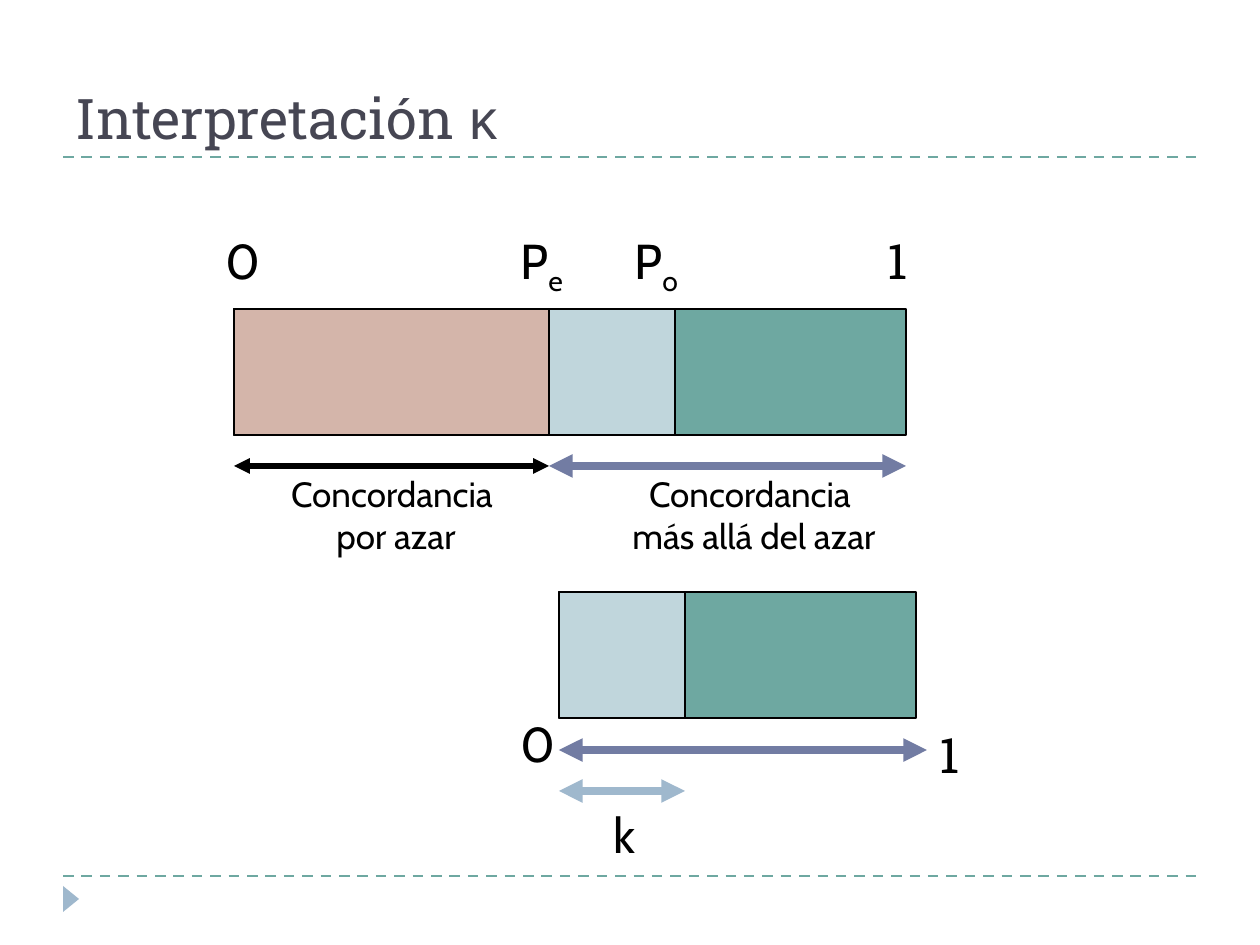
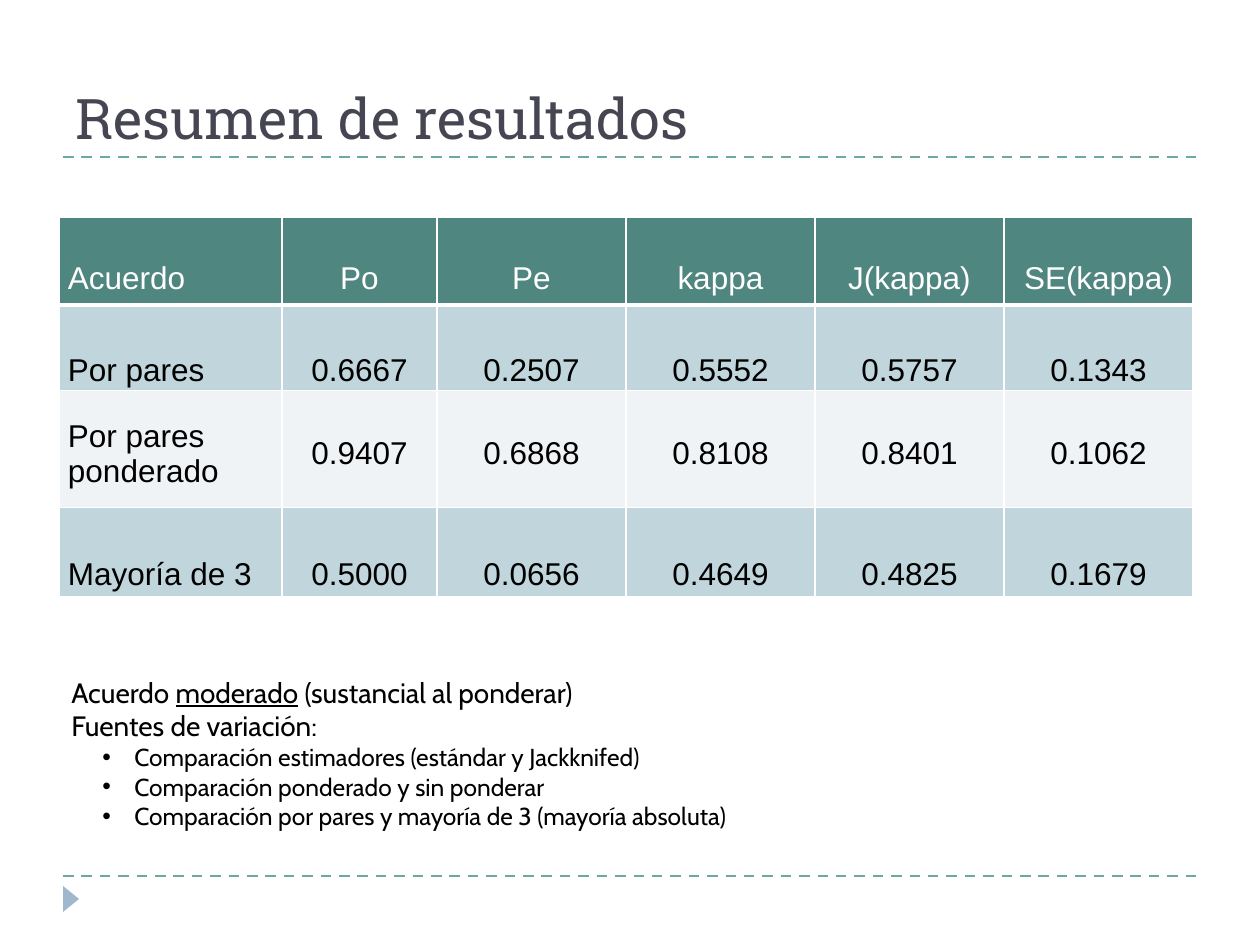
from dataclasses import dataclass

from lxml import etree
from pptx import Presentation
from pptx import util as u
from pptx.dml.color import RGBColor
from pptx.enum import dml, shapes, text
from pptx.oxml import ns


@dataclass(frozen=True)
class Theme:
    title: str = "464653"
    ink: str = "000000"
    white: str = "FFFFFF"
    teal: str = "6EA8A1"
    dark_teal: str = "508680"
    pale_blue: str = "C0D6DC"
    pale_grey: str = "F0F3F6"
    sky: str = "9FB8CD"
    violet: str = "727CA3"
    rose: str = "D4B5AA"
    slab: str = "Roboto Slab"
    sans: str = "Cabin"
    table_font: str = "Arial"
    title_size: int = 32
    axis_size: int = 28
    caption_size: int = 20
    table_size: int = 18
    note_size: int = 16
    bullet_size: int = 14


T = Theme()
SCALE = 914400 / 126
LEFT = text.PP_ALIGN.LEFT
CENTER = text.PP_ALIGN.CENTER


def px(n):
    return u.Emu(round(n * SCALE))


def rgb(color):
    return RGBColor.from_string(color)


def sub(parent, tag, **attrs):
    return etree.SubElement(parent, ns.qn(tag), attrs)


# Shared drawing helpers

def style(p, size, name=T.sans, color=T.ink, align=LEFT):
    p.alignment = align
    p.font.size = u.Pt(size)
    p.font.name = name
    p.font.color.rgb = rgb(color)


def text_box(s, box, wrap=True):
    tf = s.shapes.add_textbox(*map(px, box)).text_frame
    tf.word_wrap = wrap
    return tf


def add_run(p, words):
    r = p.add_run()
    r.text = words
    return r


def shape(s, kind, box, fill, outlined=False):
    sp = s.shapes.add_shape(kind, *map(px, box))
    sp.shadow.inherit = False
    sp.fill.solid()
    sp.fill.fore_color.rgb = rgb(fill)
    if outlined:
        sp.line.color.rgb = rgb(T.ink)
        sp.line.width = u.Pt(0.75)
    else:
        sp.line.fill.background()
    return sp


def h_line(s, x1, x2, y, color, width):
    c = s.shapes.add_connector(shapes.MSO_CONNECTOR.STRAIGHT,
                               px(x1), px(y), px(x2), px(y))
    c.line.color.rgb = rgb(color)
    c.line.width = u.Pt(width)
    sub(c._element.spPr, "a:effectLst")
    return c


def double_arrow(s, x1, x2, y, color, width=4.5):
    ln = h_line(s, x1, x2, y, color, width).line._get_or_add_ln()
    for end in ("a:headEnd", "a:tailEnd"):
        sub(ln, end, type="triangle")


# Frame: dashed rules, corner mark and title

def frame(prs, title, symbol=""):
    s = prs.slides.add_slide(prs.slide_layouts[6])
    for y in (876, 157):
        h_line(s, 63, 1197, y, T.teal, 1.5).line.dash_style = dml.MSO_LINE.DASH
    mark = shape(s, shapes.MSO_SHAPE.ISOSCELES_TRIANGLE, (58, 891, 26, 16), T.sky)
    mark.rotation = 90
    tf = text_box(s, (63, 21, 1134, 136))
    tf.vertical_anchor = text.MSO_ANCHOR.BOTTOM
    p = tf.paragraphs[0]
    style(p, T.title_size, T.slab, T.title)
    add_run(p, title)
    if symbol:
        add_run(p, symbol).font.name = T.table_font
    return s


# Agreement scale

def axis_label(s, x, y, words, subscript="", name=T.sans):
    tf = text_box(s, (x, y, 105 if subscript else 50, 72), wrap=bool(subscript))
    p = tf.paragraphs[0]
    style(p, T.axis_size, name)
    add_run(p, words)
    if subscript:
        add_run(p, subscript).font._element.set("baseline", "-25000")


def caption(s, box, lines):
    tf = text_box(s, box)
    for i, line in enumerate(lines):
        p = tf.paragraphs[0] if i == 0 else tf.add_paragraph()
        style(p, T.caption_size, align=CENTER)
        add_run(p, line)


def stacked_bar(s, x, y, segments):
    """Segments run from the widest to the narrowest, all starting at x."""
    for width, fill in segments:
        shape(s, shapes.MSO_SHAPE.RECTANGLE, (x, y, width, 126), fill, outlined=True)


def full_scale(s, x, y, chance, observed, total):
    stacked_bar(s, x, y, [(total, T.teal), (observed, T.pale_blue), (chance, T.rose)])
    label_y = y - 85
    axis_label(s, x - 21, label_y, "0")
    axis_label(s, x + chance - 41, label_y, "P", "e")
    axis_label(s, x + observed - 53, label_y, "P", "o")
    axis_label(s, x + total - 31, label_y, "1", name=T.slab)
    arrow_y = y + 157
    double_arrow(s, x, x + chance, arrow_y, T.ink, 3)
    double_arrow(s, x + chance, x + total, arrow_y, T.violet)
    caption(s, (x, arrow_y, 324, 97), ["Concordancia ", "por azar"])
    caption(s, (x + chance, arrow_y, 410, 97), ["Concordancia ", "más allá del azar"])


def kappa_scale(s, x, y, kappa, total):
    stacked_bar(s, x, y, [(total, T.teal), (kappa, T.pale_blue)])
    double_arrow(s, x, x + total + 11, y + 158, T.violet)
    double_arrow(s, x, x + kappa, y + 199, T.sky)
    axis_label(s, x - 51, y + 115, "0")
    axis_label(s, x + total + 11, y + 126, "1", name=T.slab)
    axis_label(s, x + 42, y + 206, "k")


def interpretation_slide(prs):
    s = frame(prs, "Interpretación ", "κ")
    chance, observed, total = 315, 441, 672
    full_scale(s, 234, 309, chance, observed, total)
    kappa_scale(s, 559, 592, observed - chance, total - chance)


# Results table

RESULTS = [
    ["Acuerdo", "Po", "Pe", "kappa", "J(kappa)", "SE(kappa)"],
    ["Por pares", "0.6667", "0.2507", "0.5552", "0.5757", "0.1343"],
    ["Por pares ponderado", "0.9407", "0.6868", "0.8108", "0.8401", "0.1062"],
    ["Mayoría de 3", "0.5000", "0.0656", "0.4649", "0.4825", "0.1679"],
]
COL_WIDTHS = [223, 155] + [189] * 4
ROW_HEIGHTS = [88, 83, 117, 89]
ROW_FILLS = [T.dark_teal, T.pale_blue, T.pale_grey, T.pale_blue]
ROW_SPACING = [2.0, 2.0, 1.0, 2.0]


def borders(cell, row):
    widths = {"L": 1, "R": 1, "T": 3 if row == 1 else 1, "B": 3 if row == 0 else 1}
    for side, width in widths.items():
        ln = sub(cell._tc.get_or_add_tcPr(), f"a:ln{side}", w=str(u.Pt(width)))
        sub(sub(ln, "a:solidFill"), "a:srgbClr", val=T.white)


def fill_cell(cell, row, col, words):
    borders(cell, row)
    cell.fill.solid()
    cell.fill.fore_color.rgb = rgb(ROW_FILLS[row])
    cell.vertical_anchor = text.MSO_ANCHOR.MIDDLE
    cell.margin_left = cell.margin_right = px(9)
    cell.margin_top = px(10 if row else 0)
    cell.margin_bottom = 0
    p = cell.text_frame.paragraphs[0]
    p.line_spacing = ROW_SPACING[row]
    style(p, T.table_size, T.table_font, T.ink if row else T.white,
          CENTER if col else LEFT)
    add_run(p, words)


def results_table(s, x, y):
    box = (x, y, sum(COL_WIDTHS), sum(ROW_HEIGHTS))
    table = s.shapes.add_table(len(RESULTS), len(COL_WIDTHS), *map(px, box)).table
    table.first_row = table.horz_banding = False
    for column, width in zip(table.columns, COL_WIDTHS):
        column.width = px(width)
    for i, (row, height) in enumerate(zip(table.rows, ROW_HEIGHTS)):
        row.height = px(height)
        for j, cell in enumerate(row.cells):
            fill_cell(cell, i, j, RESULTS[i][j])


# Notes under the table

def bullet(p):
    pPr = p._p.get_or_add_pPr()
    pPr.set("marL", str(px(63)))
    pPr.set("indent", str(-px(32)))
    sub(pPr, "a:buFont", typeface="Arial")
    sub(pPr, "a:buChar", char="•")


def conclusions(s, box):
    tf = text_box(s, box)
    p = tf.paragraphs[0]
    style(p, T.note_size)
    add_run(p, "Acuerdo ")
    add_run(p, "moderado").font.underline = True
    add_run(p, " (sustancial al ponderar)")
    p = tf.add_paragraph()
    style(p, T.note_size)
    add_run(p, "Fuentes de variación:")
    for source in ("Comparación estimadores (estándar y Jackknifed)",
                   "Comparación ponderado y sin ponderar",
                   "Comparación por pares y mayoría de 3 (mayoría absoluta)"):
        p = tf.add_paragraph()
        p.level = 1
        bullet(p)
        style(p, T.bullet_size)
        add_run(p, source)


def results_slide(prs):
    s = frame(prs, "Resumen de resultados")
    results_table(s, 59, 217)
    conclusions(s, (59, 669, 1123, 170))


def main():
    prs = Presentation()
    prs.slide_width, prs.slide_height = px(1260), px(945)
    interpretation_slide(prs)
    results_slide(prs)
    prs.save("out.pptx")


if __name__ == "__main__":
    main()
